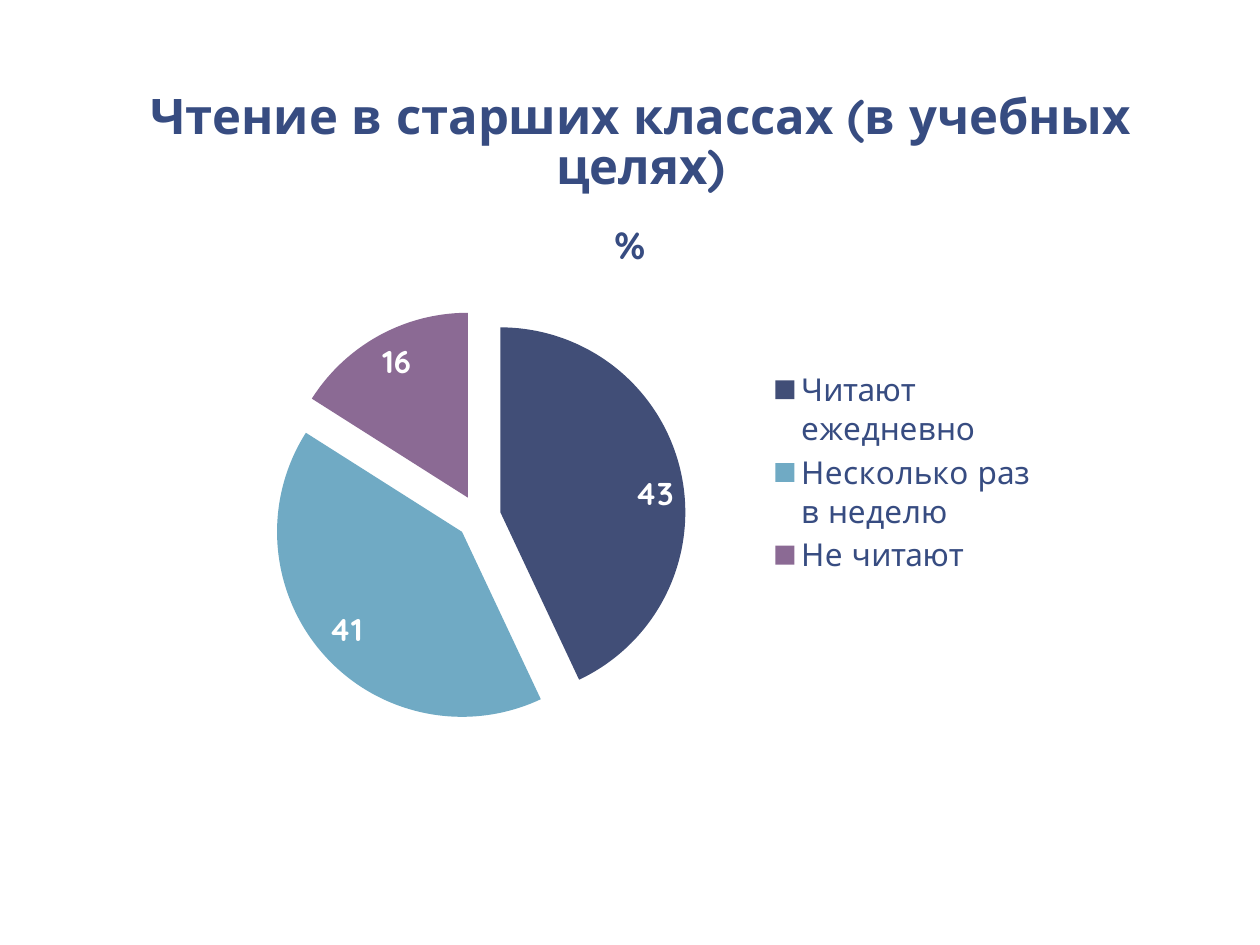
"""Build a slide with an exploded pie chart on reading in senior classes."""
from lxml.etree import SubElement
from pptx import Presentation
from pptx.chart.data import CategoryChartData
from pptx.dml.color import RGBColor
from pptx.enum.chart import XL_CHART_TYPE, XL_LABEL_POSITION, XL_LEGEND_POSITION
from pptx.enum.text import MSO_ANCHOR, PP_ALIGN
from pptx.oxml.ns import qn
from pptx.util import Pt

TITLE = "Чтение в старших классах (в учебных целях)"
UNIT = "%"
SLICES = [
    ("Читают ежедневно", 43, "navy"),
    ("Несколько раз в неделю", 41, "sky"),
    ("Не читают", 16, "plum"),
]
COLORS = {"text": "374C81", "label": "FFFFFF", "navy": "414E77",
          "sky": "70AAC4", "plum": "8B6A94"}
FONT = "Quicksand"
EXPLODE = 12
PLOT_BOX = (0.07, 0.21, 0.5, 0.74)
LEGEND_BOX = (0.66, 0.31, 0.33, 0.38)


def style(font, size, color, bold=False):
    font.name, font.size, font.bold = FONT, Pt(size), bold
    font.color.rgb = RGBColor.from_string(COLORS[color])


def place(node, index, box, inner=False):
    for old in node.findall(qn("c:layout")):
        node.remove(old)
    layout = SubElement(node, qn("c:layout"))
    node.insert(index, layout)
    manual = SubElement(layout, qn("c:manualLayout"))
    pairs = [("layoutTarget", "inner")] if inner else []
    pairs += [("xMode", "edge"), ("yMode", "edge")]
    pairs += zip("xywh", box)
    for tag, val in pairs:
        SubElement(manual, qn("c:" + tag)).set("val", str(val))


def add_title(slide):
    frame = slide.shapes.add_textbox(Pt(66), Pt(6), Pt(600), Pt(110)).text_frame
    frame.word_wrap = True
    frame.vertical_anchor = MSO_ANCHOR.BOTTOM
    frame.margin_left = frame.margin_right = Pt(9)
    frame.margin_top = frame.margin_bottom = Pt(5)
    para = frame.paragraphs[0]
    para.text = TITLE
    para.alignment = PP_ALIGN.CENTER
    para.line_spacing = 0.85
    style(para.font, 28, "text", True)


def add_pie(slide):
    data = CategoryChartData()
    data.categories = [name for name, _, _ in SLICES]
    data.add_series(UNIT, [value for _, value, _ in SLICES])
    chart = slide.shapes.add_chart(
        XL_CHART_TYPE.PIE_EXPLODED, Pt(120), Pt(110), Pt(480), Pt(320), data).chart
    style(chart.font, 18, "text")

    chart.has_title = True
    head = chart.chart_title.text_frame.paragraphs[0]
    head.text = UNIT
    style(head.font, 21.6, "text", True)

    chart.has_legend = True
    legend = chart.legend
    legend.position = XL_LEGEND_POSITION.RIGHT
    legend.include_in_layout = False
    style(legend.font, 18, "text")

    plot = chart.plots[0]
    plot.vary_by_categories = True
    series = plot.series[0]
    for part in series._element.iter(qn("c:explosion")):
        part.set("val", str(EXPLODE))
    for i, (_, _, color) in enumerate(SLICES):
        fill = series.points[i].format.fill
        fill.solid()
        fill.fore_color.rgb = RGBColor.from_string(COLORS[color])

    labels = series.data_labels
    labels.show_value = True
    labels.show_percentage = False
    labels.position = XL_LABEL_POSITION.INSIDE_END
    style(labels.font, 18, "label", True)

    place(chart._chartSpace.chart.plotArea, 0, PLOT_BOX, True)
    place(legend._element, 1, LEGEND_BOX)


def main():
    deck = Presentation()
    deck.slide_width, deck.slide_height = Pt(720), Pt(540)
    slide = deck.slides.add_slide(deck.slide_layouts[6])
    add_title(slide)
    add_pie(slide)
    deck.save("out.pptx")


if __name__ == "__main__":
    main()
